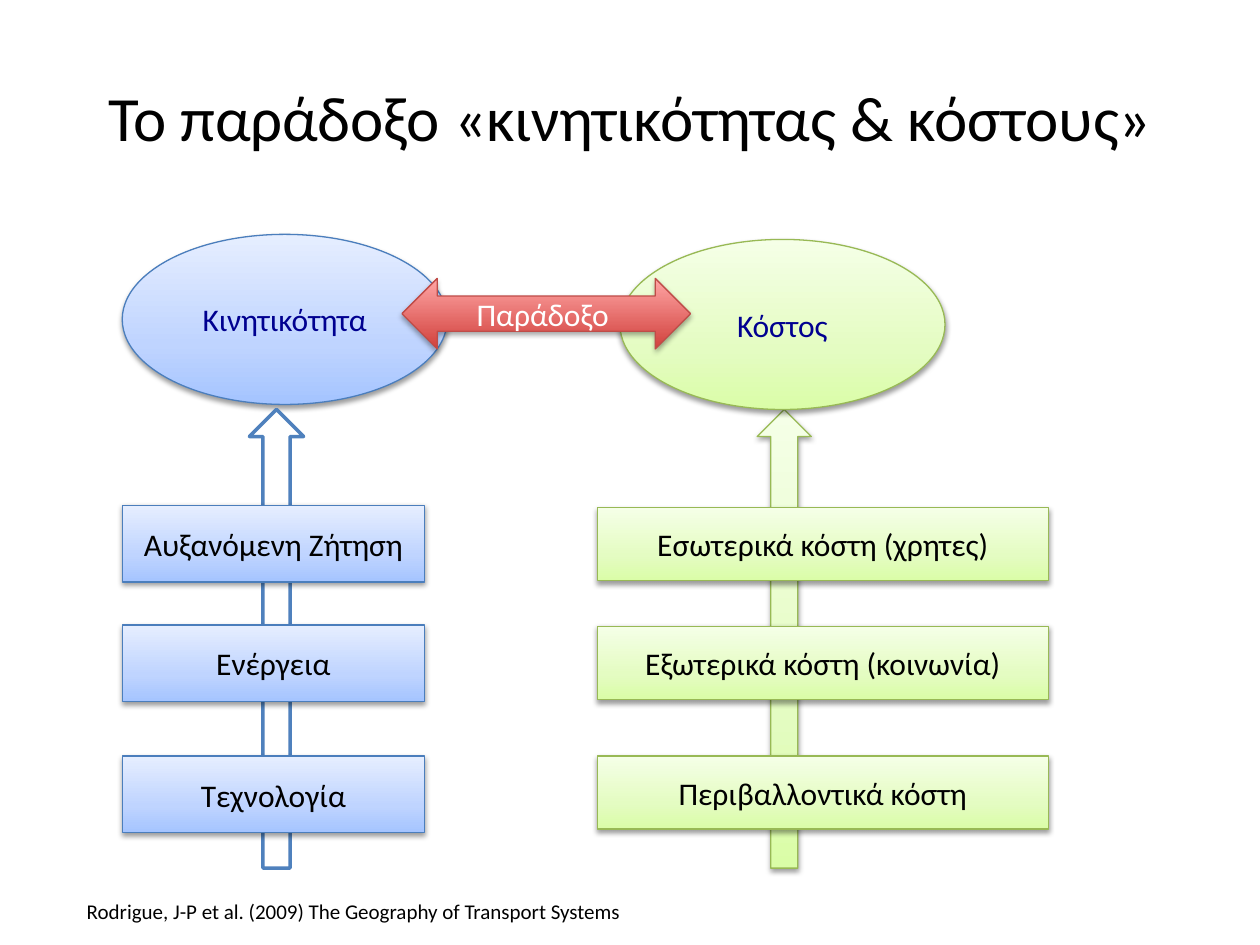
import pptx
import pptx.util
import pptx.dml.color
import pptx.enum.shapes
import pptx.enum.text
import pptx.oxml.ns
import lxml.etree

Inches = pptx.util.Inches
Pt = pptx.util.Pt
Kind = pptx.enum.shapes.MSO_SHAPE
Align = pptx.enum.text.PP_ALIGN
Anchor = pptx.enum.text.MSO_ANCHOR

BLUE = {"stops": [(0, "A4C4FF"), (35, "BFD4FF"), (100, "E6EEFF")], "line": "4B7EBC", "shadow": 38}
GREEN = {"stops": [(0, "DAFDA7"), (35, "E4FCC2"), (100, "F5FFE7")], "line": "98B955", "shadow": 38}
RED = {"stops": [(0, "D1403C"), (100, "FFA6A5")], "line": "BF4C48", "shadow": 35}


def color(value):
    return pptx.dml.color.RGBColor.from_string(value)


def add_xml(parent, tag, **attributes):
    element = lxml.etree.SubElement(parent, pptx.oxml.ns.qn(tag))
    for name, value in attributes.items():
        element.set(name, str(value))
    return element


class SlideBuilder:
    font = "Calibri"

    def __init__(self, slide):
        self.slide = slide

    def set_text(self, shape, text, size, text_color, align, anchor):
        frame = shape.text_frame
        frame.word_wrap = True
        frame.vertical_anchor = anchor
        frame.text = text
        paragraph = frame.paragraphs[0]
        paragraph.alignment = align
        font = paragraph.runs[0].font
        font.name, font.size = self.font, Pt(size)
        font.color.rgb = color(text_color)

    def add_text(self, box, text, size, align=Align.LEFT, anchor=Anchor.TOP):
        shape = self.slide.shapes.add_textbox(*map(Inches, box))
        self.set_text(shape, text, size, "000000", align, anchor)

    def add_outline(self, kind, box, line, width):
        """Add a white shape with a coloured outline and no shadow."""
        shape = self.slide.shapes.add_shape(kind, *map(Inches, box))
        shape.shadow.inherit = False
        shape.fill.solid()
        shape.fill.fore_color.rgb = color("FFFFFF")
        shape.line.color.rgb = color(line)
        shape.line.width = Pt(width)
        return shape

    def add_block(self, kind, box, theme, text=None, text_color="000000"):
        """Add a shape with a vertical gradient and a soft shadow below it."""
        shape = self.add_outline(kind, box, theme["line"], 0.75)
        shape.fill.gradient()
        shape.fill.gradient_angle = 90
        properties = shape._element.spPr
        stops = properties.find(".//" + pptx.oxml.ns.qn("a:gsLst"))
        for stop in list(stops):
            stops.remove(stop)
        for position, value in theme["stops"]:
            stop = add_xml(stops, "a:gs", pos=position * 1000)
            add_xml(stop, "a:srgbClr", val=value)
        effects = properties.find(pptx.oxml.ns.qn("a:effectLst"))
        shadow = add_xml(effects, "a:outerShdw", blurRad=Pt(3.1), dist=Pt(1.6),
                         dir=90 * 60000, rotWithShape=0)
        shade = add_xml(shadow, "a:srgbClr", val="000000")
        add_xml(shade, "a:alpha", val=theme["shadow"] * 1000)
        if text:
            self.set_text(shape, text, 18, text_color, Align.CENTER, Anchor.MIDDLE)

    def add_stack(self, left, tops, width, height, theme, labels):
        for top, label in zip(tops, labels):
            self.add_block(Kind.RECTANGLE, (left, top, width, height), theme, label)


def main():
    presentation = pptx.Presentation()
    presentation.slide_width, presentation.slide_height = Inches(10), Inches(7.5)
    builder = SlideBuilder(presentation.slides.add_slide(presentation.slide_layouts[6]))

    builder.add_block(Kind.UP_ARROW, (6.01, 3.25, 0.43, 3.64), GREEN)
    builder.add_text((0.5, 0.3, 9, 1.25), "Το παράδοξο «κινητικότητας & κόστους»", 36,
                     Align.CENTER, Anchor.MIDDLE)

    builder.add_block(Kind.OVAL, (0.97, 1.86, 2.58, 1.35), BLUE, "Κινητικότητα", "000090")
    builder.add_block(Kind.OVAL, (4.92, 1.9, 2.58, 1.35), GREEN, "Κόστος", "000090")
    builder.add_block(Kind.LEFT_RIGHT_ARROW, (3.19, 2.21, 2.29, 0.56), RED,
                      "Παράδοξο ", "FFFFFF")

    builder.add_outline(Kind.UP_ARROW, (1.98, 3.25, 0.43, 3.64), "4F81BD", 2)
    builder.add_stack(0.97, (4.01, 4.96, 6), 2.4, 0.61, BLUE,
                      ("Αυξανόμενη Ζήτηση", "Ενέργεια", "Τεχνολογία"))
    builder.add_stack(4.74, (4.03, 4.97, 6), 3.58, 0.58, GREEN,
                      ("Εσωτερικά κόστη (χρητες)", "Εξωτερικά κόστη (κοινωνία)",
                       "Περιβαλλοντικά κόστη"))

    builder.add_text((0.59, 7.08, 5, 0.3),
                     "Rodrigue, J-P et al. (2009) The Geography of Transport Systems", 12)
    presentation.save("out.pptx")


if __name__ == "__main__":
    main()
